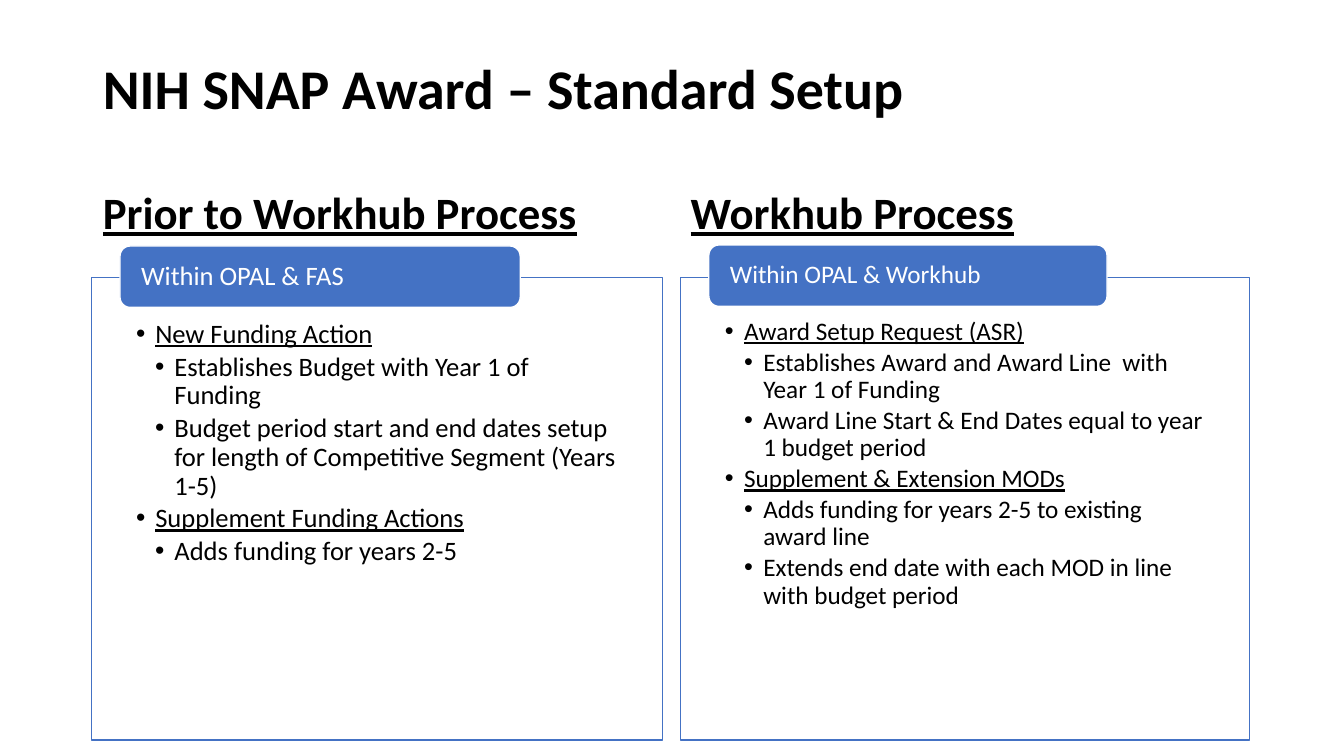
from dataclasses import dataclass

from lxml.etree import SubElement
from pptx import Presentation
from pptx.dml.color import RGBColor
from pptx.dml.fill import FillFormat
from pptx.enum.shapes import MSO_SHAPE
from pptx.enum.text import MSO_ANCHOR, MSO_AUTO_SIZE, PP_ALIGN
from pptx.oxml.ns import qn
from pptx.shapes.autoshape import Shape
from pptx.slide import Slide
from pptx.text.text import _Paragraph
from pptx.util import Inches, Pt

FONT = "Calibri"
BLACK, WHITE, BLUE = "000000", "FFFFFF", "4472C4"
INDENT = 0.19
Box = tuple[float, float, float, float]


@dataclass(frozen=True)
class Item:
    text: str
    level: int = 1


@dataclass(frozen=True)
class Column:
    heading: str
    tab: str
    items: list[Item]
    size: float
    left: float
    width: float
    tab_top: float
    tab_width: float
    inset_top: float
    heading_idx: int
    list_idx: int


COLUMNS = [
    Column("Prior to Workhub Process", "Within OPAL & FAS", [
        Item("New Funding Action", 0),
        Item("Establishes Budget with Year 1 of Funding"),
        Item("Budget period start and end dates setup for length of "
             "Competitive Segment (Years 1-5)"),
        Item("Supplement Funding Actions", 0),
        Item("Adds funding for years 2-5"),
    ], 19, 0.91, 5.66, 2.44, 3.97, 0.43, 1, 2),
    Column("Workhub Process", "Within OPAL & Workhub", [
        Item("Award Setup Request (ASR)", 0),
        Item("Establishes Award and Award Line  with Year 1 of Funding"),
        Item("Award Line Start & End Dates equal to year 1 budget period"),
        Item("Supplement & Extension MODs", 0),
        Item("Adds funding for years 2-5 to existing award line"),
        Item("Extends end date with each MOD in line with budget period"),
    ], 18, 6.75, 5.64, 2.43, 3.95, 0.41, 3, 4),
]


def rgb(color: str) -> RGBColor:
    return RGBColor.from_string(color)


def place(sp: Shape, box: Box) -> None:
    sp.left, sp.top, sp.width, sp.height = map(Inches, box)


def set_frame(sp: Shape, anchor: MSO_ANCHOR, insets: Box) -> None:
    """Set wrapping, anchor and left, top, right, bottom insets."""
    tf = sp.text_frame
    tf.word_wrap = True
    tf.auto_size = MSO_AUTO_SIZE.NONE
    tf.vertical_anchor = anchor
    (tf.margin_left, tf.margin_top,
     tf.margin_right, tf.margin_bottom) = map(Inches, insets)


def format_paragraph(p: _Paragraph, size: float, color: str = BLACK,
                     bold: bool = False, underline: bool = False,
                     spacing: float = 0.9, before: float = 0,
                     after: float = 0) -> None:
    p.alignment = PP_ALIGN.LEFT
    p.line_spacing = spacing
    p.space_before, p.space_after = Pt(before), Pt(after)
    for r in p.runs:
        r.font.name, r.font.size = FONT, Pt(size)
        r.font.bold, r.font.underline = bold, underline
        r.font.color.rgb = rgb(color)


def add_bullet(p: _Paragraph) -> None:
    pPr = p._p.get_or_add_pPr()
    pPr.set("marL", str(Inches(INDENT * (p.level + 1))))
    pPr.set("indent", str(Inches(-INDENT)))
    SubElement(pPr, qn("a:buFont"), typeface="Arial")
    SubElement(pPr, qn("a:buChar"), char="•")


def paint(sp: Shape, fill: str, line: str) -> FillFormat:
    sp.fill.solid()
    sp.fill.fore_color.rgb = rgb(fill)
    sp.line.color.rgb = rgb(line)
    sp.line.width = Pt(1)
    return sp.fill


def add_title(s: Slide, text: str) -> None:
    sp = s.shapes.title
    place(sp, (0.92, 0.4, 11.5, 1.02))
    set_frame(sp, MSO_ANCHOR.MIDDLE, (0.1, 0.05, 0.1, 0.05))
    sp.text_frame.text = text
    format_paragraph(sp.text_frame.paragraphs[0], 40, bold=True)


def add_heading(s: Slide, col: Column) -> None:
    sp = s.placeholders[col.heading_idx]
    place(sp, (max(col.left, 0.92), 1.84, 5.65, 0.57))
    set_frame(sp, MSO_ANCHOR.BOTTOM, (0.1, 0.05, 0.1, 0.05))
    sp.text_frame.text = col.heading
    format_paragraph(sp.text_frame.paragraphs[0], 32, bold=True,
                     underline=True, spacing=0.8, before=10)


def add_list(s: Slide, col: Column) -> None:
    sp = s.placeholders[col.list_idx]
    place(sp, (col.left, 2.75, col.width, 4.59))
    paint(sp, WHITE, BLUE)
    set_frame(sp, MSO_ANCHOR.TOP, (0.44, col.inset_top, 0.44, 0.15))
    tf = sp.text_frame
    tf.text = "\n".join(item.text for item in col.items)
    for p, item in zip(tf.paragraphs, col.items):
        p.level = item.level
        format_paragraph(p, col.size, underline=item.level == 0,
                         after=0.15 * col.size)
        add_bullet(p)


def add_tab(s: Slide, col: Column) -> None:
    box = (col.left + 0.28, col.tab_top, col.tab_width, 0.61)
    sp = s.shapes.add_shape(MSO_SHAPE.ROUNDED_RECTANGLE, *map(Inches, box))
    sp.shadow.inherit = False
    paint(sp, BLUE, WHITE)
    set_frame(sp, MSO_ANCHOR.MIDDLE, (0.18, 0, 0.18, 0))
    sp.text_frame.text = col.tab
    format_paragraph(sp.text_frame.paragraphs[0], col.size, WHITE)


def main() -> None:
    prs = Presentation()
    prs.slide_width, prs.slide_height = Inches(13.33), Inches(7.5)
    s = prs.slides.add_slide(prs.slide_layouts.get_by_name("Comparison"))
    add_title(s, "NIH SNAP Award – Standard Setup")
    for col in COLUMNS:
        add_heading(s, col)
        add_list(s, col)
        add_tab(s, col)
    prs.save("out.pptx")


if __name__ == "__main__":
    main()
